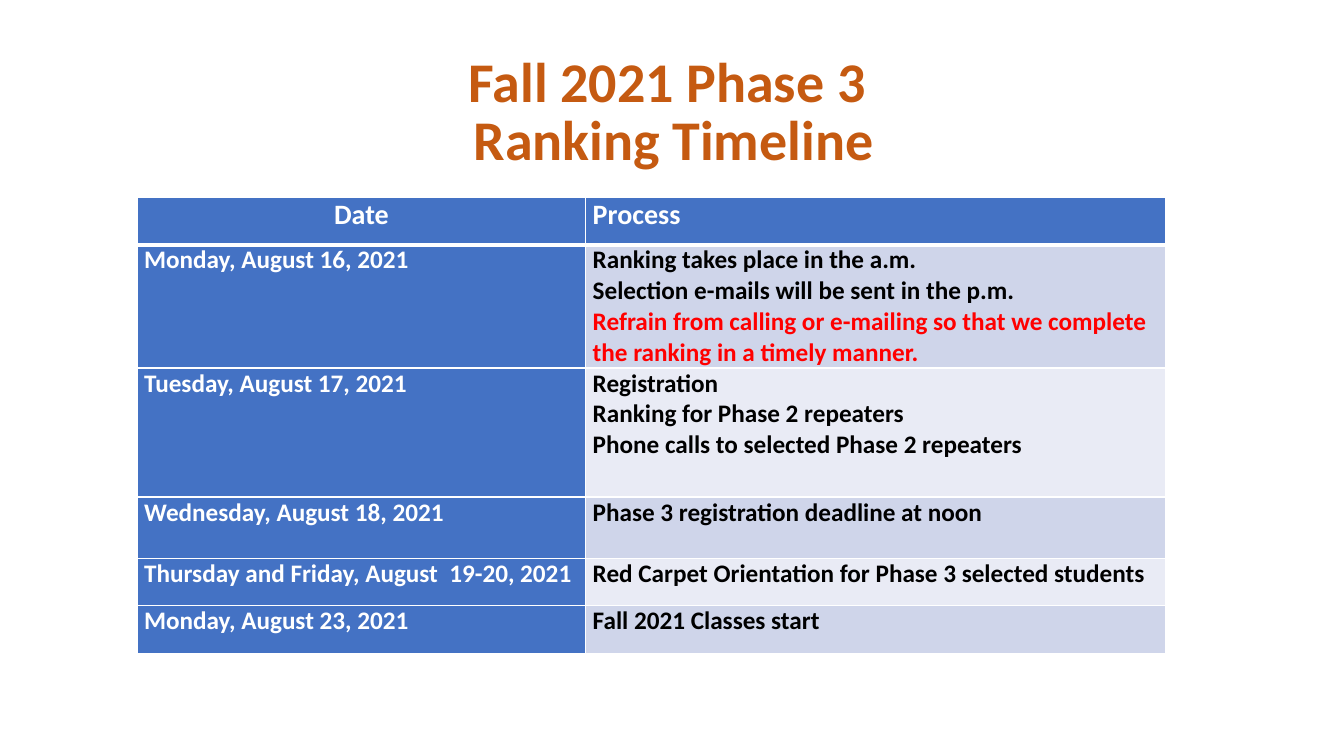
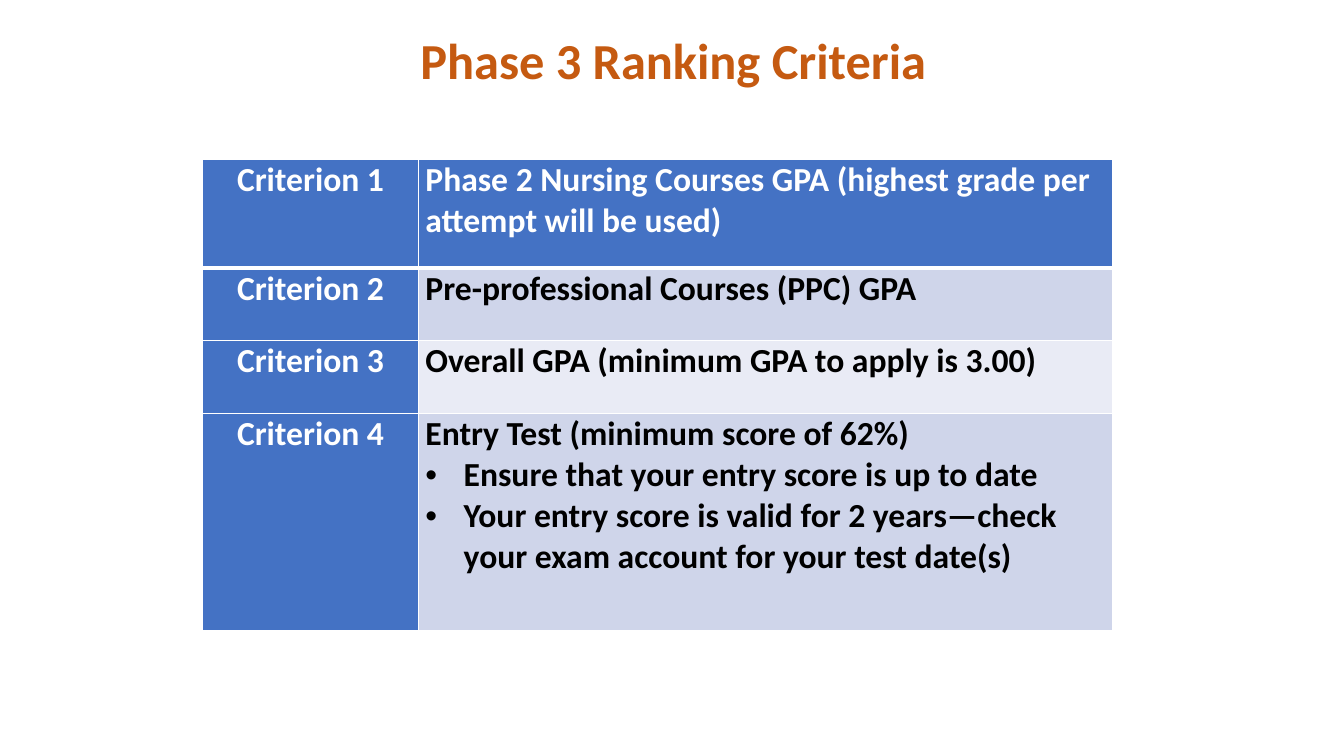
"""Build the Phase 3 ranking timeline and ranking criteria slides."""
from lxml import etree
from pptx import Presentation
from pptx.dml.color import RGBColor
from pptx.enum.text import MSO_ANCHOR, MSO_AUTO_SIZE, PP_ALIGN
from pptx.oxml.ns import qn
from pptx.util import Inches, Pt

MID, TOP = MSO_ANCHOR.MIDDLE, MSO_ANCHOR.TOP
LEFT, CENTER = PP_ALIGN.LEFT, PP_ALIGN.CENTER
FIXED = MSO_AUTO_SIZE.NONE
FONT = "Calibri"
WIDE, HIGH = Inches(13.33), Inches(7.5)
INK = {"title": "C55A11", "head": "4472C4", "odd": "CFD5EA", "even": "E9EBF5",
       "white": "FFFFFF", "black": "000000", "red": "FF0000"}


def write(para, text, size, ink, align):
    """Add one bold run to an aligned paragraph."""
    para.alignment = align
    run = para.add_run()
    run.text = text
    run.font.name, run.font.size, run.font.bold = FONT, Pt(size), True
    run.font.color.rgb = RGBColor.from_string(INK[ink])


def edge(cell, below):
    """Draw white borders round a cell, with the given width below it."""
    props = cell._tc.get_or_add_tcPr()
    for spot, (side, width) in enumerate(
            [("lnL", 1), ("lnR", 1), ("lnT", 1), ("lnB", below)]):
        line = etree.Element(qn("a:" + side), w=str(Pt(width)))
        fill = etree.SubElement(line, qn("a:solidFill"))
        etree.SubElement(fill, qn("a:srgbClr"), val=INK["white"])
        props.insert(spot, line)


SLIDES = [
    {"title": ["Fall 2021 Phase 3 ", "Ranking Timeline"],
     "size": 40, "tall": 22, "anchor": MID, "lead": 0.85,
     "spot": (10.2, 26.13), "cols": [33.38, 43.14],
     "rows": [6.27, 16.13, 17.07, 8.13, 6.27, 6.27],
     "sizes": (20, 18), "align": LEFT,
     "cells": [
         ("Date", [("Process", "white")]),
         ("Monday, August 16, 2021", [
             ("Ranking takes place in the a.m.", "black"),
             ("Selection e-mails will be sent in the p.m.", "black"),
             ("Refrain from calling or e-mailing so that we complete "
              "the ranking in a timely manner.", "red")]),
         ("Tuesday, August 17, 2021", [
             ("Registration", "black"),
             ("Ranking for Phase 2 repeaters", "black"),
             ("Phone calls to selected Phase 2 repeaters", "black")]),
         ("Wednesday, August 18, 2021",
          [("Phase 3 registration deadline at noon", "black")]),
         ("Thursday and Friday, August  19-20, 2021",
          [("Red Carpet Orientation for Phase 3 selected students", "black")]),
         ("Monday, August 23, 2021", [("Fall 2021 Classes start", "black")])]},
    {"title": ["Phase 3 Ranking Criteria"],
     "size": 36, "tall": 10.27, "anchor": TOP, "lead": 0.9,
     "spot": (15.08, 21.07), "cols": [16.05, 51.69],
     "rows": [14.4, 9.6, 9.6, 28.8],
     "sizes": (24, 24), "align": CENTER,
     "cells": [
         ("Criterion 1", [("Phase 2 Nursing Courses GPA (highest grade per "
                           "attempt will be used)", "white")]),
         ("Criterion 2", [("Pre-professional Courses (PPC) GPA", "black")]),
         ("Criterion 3",
          [("Overall GPA (minimum GPA to apply is 3.00)", "black")]),
         ("Criterion 4", [
             ("Entry Test (minimum score of 62%)", "black"),
             ("Ensure that your entry score is up to date", "dot"),
             ("Your entry score is valid for 2 years—check your exam account "
              "for your test date(s)", "dot")])]},
]

deck = Presentation()
deck.slide_width, deck.slide_height = WIDE, HIGH
col, row = WIDE / 100, HIGH / 100

for page in SLIDES:
    slide = deck.slides.add_slide(deck.slide_layouts[5])
    title = slide.shapes.title
    title.left, title.top = int(18.23 * col), int(4.13 * row)
    title.width, title.height = int(63.77 * col), int(page["tall"] * row)
    frame = title.text_frame
    frame.auto_size, frame.word_wrap = FIXED, True
    frame.vertical_anchor = page["anchor"]
    for n, text in enumerate(page["title"]):
        para = frame.add_paragraph() if n else frame.paragraphs[0]
        para.line_spacing = page["lead"]
        write(para, text, page["size"], "title", CENTER)

    left, top = page["spot"]
    table = slide.shapes.add_table(
        len(page["rows"]), len(page["cols"]), int(left * col), int(top * row),
        int(sum(page["cols"]) * col), int(sum(page["rows"]) * row)).table
    table.horz_banding = False
    for n, share in enumerate(page["cols"]):
        table.columns[n].width = int(share * col)
    for n, share in enumerate(page["rows"]):
        table.rows[n].height = int(share * row)

    for n, (label, lines) in enumerate(page["cells"]):
        size = page["sizes"][min(n, 1)]
        band = "head" if n == 0 else "odd" if n % 2 else "even"
        for m, tint in enumerate(["head", band]):
            cell = table.cell(n, m)
            cell.fill.solid()
            cell.fill.fore_color.rgb = RGBColor.from_string(INK[tint])
            cell.margin_left = cell.margin_right = Inches(0.07)
            cell.margin_top = cell.margin_bottom = 0
            cell.vertical_anchor = TOP
            edge(cell, 1 if n else 3)
        write(table.cell(n, 0).text_frame.paragraphs[0], label, size, "white",
              page["align"] if n else CENTER)
        frame = table.cell(n, 1).text_frame
        for m, (text, kind) in enumerate(lines):
            para = frame.add_paragraph() if m else frame.paragraphs[0]
            if kind == "dot":
                props = para._p.get_or_add_pPr()
                props.set("marL", str(Inches(0.38)))
                props.set("indent", str(-Inches(0.38)))
                etree.SubElement(props, qn("a:buFont"), typeface="Arial")
                etree.SubElement(props, qn("a:buChar"), char="•")
            write(para, text, size, "black" if kind == "dot" else kind, LEFT)

deck.save("out.pptx")
